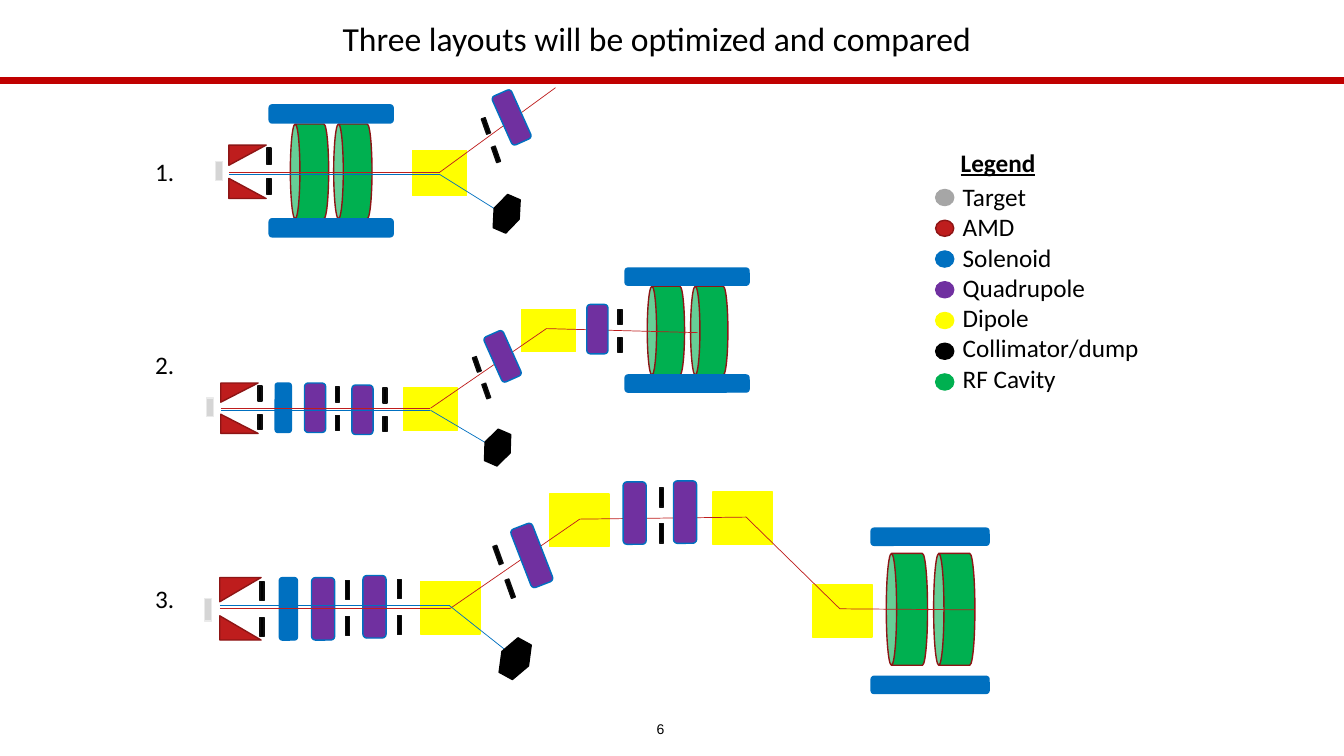
import math
from collections import namedtuple
from itertools import pairwise

from lxml import etree
from pptx import Presentation, util as u
from pptx.dml.color import RGBColor
from pptx.enum import shapes, text
from pptx.oxml.ns import qn

RED, DARK_RED = RGBColor(0xBE, 0x1D, 0x1D), RGBColor(0x8D, 0x15, 0x15)
RULE_RED = RGBColor(0xC0, 0x00, 0x00)
BLUE = RGBColor(0x00, 0x70, 0xC0)
PURPLE = RGBColor(0x70, 0x30, 0xA0)
YELLOW = RGBColor(0xFF, 0xFF, 0x00)
GREEN = RGBColor(0x00, 0xB0, 0x50)
BLACK, SOFT_BLACK = RGBColor(0, 0, 0), RGBColor(0x0D, 0x0D, 0x0D)
GREY = RGBColor(0xA6, 0xA6, 0xA6)
TARGET_GREY, TARGET_EDGE = RGBColor(0xD5, 0xD5, 0xD5), RGBColor(0xEA, 0xEA, 0xEA)

# The slide is a grid of 13.33 columns by 7.5 rows
COLUMNS, ROWS = 13.33, 7.5
WIDTH, HEIGHT = u.Inches(COLUMNS), u.Inches(ROWS)
KIND = shapes.MSO_SHAPE

# Width and height of each device in one layout; slit is a collimator jaw's height
Sizes = namedtuple("Sizes", "amd target quadrupole dipole slit cavity coil dump")
SIZES_1 = Sizes((0.37, 0.20), (0.07, 0.19), (0.21, 0.53), (0.54, 0.45), 0.16,
                (0.38, 0.94), (1.23, 0.18), (0.27, 0.36))
SIZES_2 = Sizes((0.37, 0.19), (0.07, 0.18), (0.21, 0.49), (0.54, 0.42), 0.15,
                (0.37, 0.88), (1.23, 0.17), (0.27, 0.34))
SIZES_3 = Sizes((0.41, 0.24), (0.07, 0.22), (0.23, 0.62), (0.59, 0.52), 0.19,
                (0.41, 1.11), (1.17, 0.17), (0.30, 0.39))

LEGEND = [("Target", GREY, GREY), ("AMD", RED, DARK_RED), ("Solenoid", BLUE, BLUE),
          ("Quadrupole", PURPLE, PURPLE), ("Dipole", YELLOW, YELLOW),
          ("Collimator/dump", BLACK, BLACK), ("RF Cavity", GREEN, GREEN)]


def col(count):
    return round(WIDTH * count / COLUMNS)


def row(count):
    return round(HEIGHT * count / ROWS)


def add_device(parts, kind, left, top, size, fill, edge, tilt=0):
    device = parts.add_shape(kind, col(left), row(top), col(size[0]), row(size[1]))
    device.shadow.inherit = False
    device.fill.solid()
    device.fill.fore_color.rgb = fill
    device.line.color.rgb = edge
    device.line.width = u.Pt(1)
    device.rotation = tilt
    return device


def add_label(parts, words, left, top, size, points, font="Calibri", bold=False):
    label = parts.add_textbox(col(left), row(top), col(size[0]), row(size[1]))
    frame = label.text_frame
    frame.word_wrap = False
    frame.text = words
    for paragraph in frame.paragraphs:
        for run in paragraph.runs:
            run.font.name = font
            run.font.size = u.Pt(points)
            run.font.color.rgb = BLACK
            if bold:
                run.font.bold = run.font.underline = True
    return frame


def add_path(parts, color, points, *stops):
    """Straight lines from stop to stop."""
    for start, end in pairwise(stops):
        leg = parts.add_connector(shapes.MSO_CONNECTOR.STRAIGHT, col(start[0]),
                                  row(start[1]), col(end[0]), row(end[1]))
        leg.line.color.rgb = color
        leg.line.width = u.Pt(points)
        etree.SubElement(leg._element.spPr, qn("a:effectLst"))


def add_source(parts, sizes, left, upper, lower, target):
    """Target and the two wedges of the AMD."""
    add_device(parts, KIND.RIGHT_TRIANGLE, left, lower, sizes.amd, RED, DARK_RED)
    wedge = add_device(parts, KIND.RIGHT_TRIANGLE, left, upper, sizes.amd, RED, DARK_RED)
    wedge._element.spPr.xfrm.set("flipV", "1")
    add_device(parts, KIND.RECTANGLE, *target, sizes.target, TARGET_GREY, TARGET_EDGE)


def add_collimator(parts, sizes, left, top, tilt=0):
    """Two jaws, one below the other along the tilted axis."""
    gap, angle = 1.87 * sizes.slit, math.radians(tilt)
    for step in (0, gap):
        add_device(parts, KIND.RECTANGLE, left - step * math.sin(angle),
                   top + step * math.cos(angle), (0.04, sizes.slit),
                   BLACK, SOFT_BLACK, tilt)


def add_quadrupole(parts, sizes, left, top, tilt=0):
    add_device(parts, KIND.ROUNDED_RECTANGLE, left, top, sizes.quadrupole,
               PURPLE, BLUE, tilt)


def add_solenoid(parts, left, top, size):
    add_device(parts, KIND.ROUNDED_RECTANGLE, left, top, size, BLUE, BLUE)


def add_dipole(parts, sizes, left, top):
    add_device(parts, KIND.RECTANGLE, left, top, sizes.dipole, YELLOW, YELLOW)


def add_dump(parts, sizes, left, top, tilt):
    add_device(parts, KIND.HEXAGON, left, top, sizes.dump, BLACK, BLACK, tilt)


def add_rf_section(parts, sizes, coil_left, coil_tops, cavity_lefts, cavity_top):
    """Two lying cavities between an upper and a lower solenoid."""
    across, tall = sizes.cavity
    shift = (tall - across) / 2
    for left in cavity_lefts:
        add_device(parts, KIND.CAN, left - shift, cavity_top + shift,
                   (tall, across), GREEN, DARK_RED, 270)
    for top in coil_tops:
        add_solenoid(parts, coil_left, top, sizes.coil)


def draw_layout_1(parts, sizes):
    add_source(parts, sizes, 2.27, 1.44, 1.77, (2.14, 1.60))
    add_collimator(parts, sizes, 2.65, 1.47)
    add_dipole(parts, sizes, 4.09, 1.49)
    add_collimator(parts, sizes, 4.80, 1.17, -19.4)
    add_rf_section(parts, sizes, 2.67, (1.04, 2.17), (2.88, 3.31), 1.23)
    add_path(parts, RED, 0.5, (2.27, 1.71), (4.36, 1.71), (5.51, 0.87))
    add_path(parts, BLUE, 0.5, (2.27, 1.73), (4.36, 1.73), (4.92, 2.08))
    add_dump(parts, sizes, 4.89, 1.94, 203.5)
    add_quadrupole(parts, sizes, 4.97, 0.90, -24.1)


def draw_layout_2(parts, sizes):
    add_source(parts, sizes, 2.19, 3.80, 4.11, (2.05, 3.95))
    add_solenoid(parts, 2.73, 3.80, (0.16, 0.49))
    for left, top in ((2.56, 3.83), (3.33, 3.84), (3.80, 3.85), (6.13, 3.07)):
        add_collimator(parts, sizes, left, top)
    for left, top in ((3.02, 3.80), (3.49, 3.82)):
        add_quadrupole(parts, sizes, left, top)
    for left, top in ((4.00, 3.85), (5.17, 3.07)):
        add_dipole(parts, sizes, left, top)
    add_collimator(parts, sizes, 4.71, 3.54, -19.4)
    add_rf_section(parts, sizes, 6.20, (2.66, 3.72), (6.42, 6.85), 2.84)
    add_path(parts, RED, 0.5, (2.19, 4.05), (4.27, 4.05), (5.42, 3.26), (6.92, 3.30))
    add_path(parts, BLUE, 0.5, (2.19, 4.07), (4.27, 4.07), (4.83, 4.40))
    add_dump(parts, sizes, 4.80, 4.27, 203.5)
    add_quadrupole(parts, sizes, 5.82, 3.02)
    add_quadrupole(parts, sizes, 4.88, 3.29, -24.1)


def draw_layout_3(parts, sizes):
    add_source(parts, sizes, 2.18, 5.73, 6.11, (2.03, 5.94))
    add_solenoid(parts, 2.77, 5.73, (0.18, 0.62))
    for left, top in ((2.58, 5.77), (3.43, 5.76), (3.94, 5.75), (6.54, 4.84)):
        add_collimator(parts, sizes, left, top)
    for left, top in ((3.09, 5.73), (3.60, 5.71)):
        add_quadrupole(parts, sizes, left, top)
    for left, top in ((4.17, 5.77), (5.45, 4.90), (7.07, 4.88), (8.06, 5.80)):
        add_dipole(parts, sizes, left, top)
    add_collimator(parts, sizes, 4.92, 5.41, -19.8)
    add_rf_section(parts, sizes, 8.64, (5.24, 6.71), (8.79, 9.26), 5.49)
    add_path(parts, RED, 0.5, (2.18, 6.04), (4.46, 6.04), (5.75, 5.15),
             (7.40, 5.13), (8.33, 6.04), (9.67, 6.05))
    add_path(parts, BLUE, 0.5, (2.18, 6.01), (4.46, 6.01), (5.04, 6.47))
    add_dump(parts, sizes, 4.96, 6.34, 28.7)
    add_quadrupole(parts, sizes, 5.16, 5.20, -21.2)
    for left, top in ((6.18, 4.78), (6.68, 4.77)):
        add_quadrupole(parts, sizes, left, top)


def draw_legend(parts):
    add_label(parts, "Legend", 9.43, 1.41, (0.94, 0.40), 18, bold=True)
    for index, (_, fill, edge) in enumerate(LEGEND):
        add_device(parts, KIND.OVAL, 9.28, 1.88 + 0.305 * index, (0.18, 0.16), fill, edge)
    names = "\n".join(name for name, _, _ in LEGEND)
    add_label(parts, names, 9.45, 1.75, (1.97, 2.22), 18)


def main():
    deck = Presentation()
    deck.slide_width, deck.slide_height = WIDTH, HEIGHT
    canvas = deck.slides.add_slide(deck.slide_layouts[6]).shapes

    # Heading and page number
    add_path(canvas, RULE_RED, 4.5, (0, 0.80), (COLUMNS, 0.80))
    add_label(canvas, "Three layouts will be optimized and compared",
              3.30, 0.13, (6.50, 0.50), 24)
    page = add_label(canvas, "6", 6.16, 7.07, (0.78, 0.33), 10, font="Arial")
    page.vertical_anchor = text.MSO_ANCHOR.MIDDLE
    page.paragraphs[0].alignment = text.PP_ALIGN.CENTER

    # The three beamlines, each a group with its number
    beamlines = [(draw_layout_1, SIZES_1, 1.50), (draw_layout_2, SIZES_2, 3.42),
                 (draw_layout_3, SIZES_3, 5.74)]
    for number, (draw, sizes, label_top) in enumerate(beamlines, 1):
        draw(canvas.add_group_shape().shapes, sizes)
        add_label(canvas, f"{number}.", 1.44, label_top, (0.39, 0.40), 18)

    # Legend
    draw_legend(canvas.add_group_shape().shapes)
    deck.save("out.pptx")


if __name__ == "__main__":
    main()
